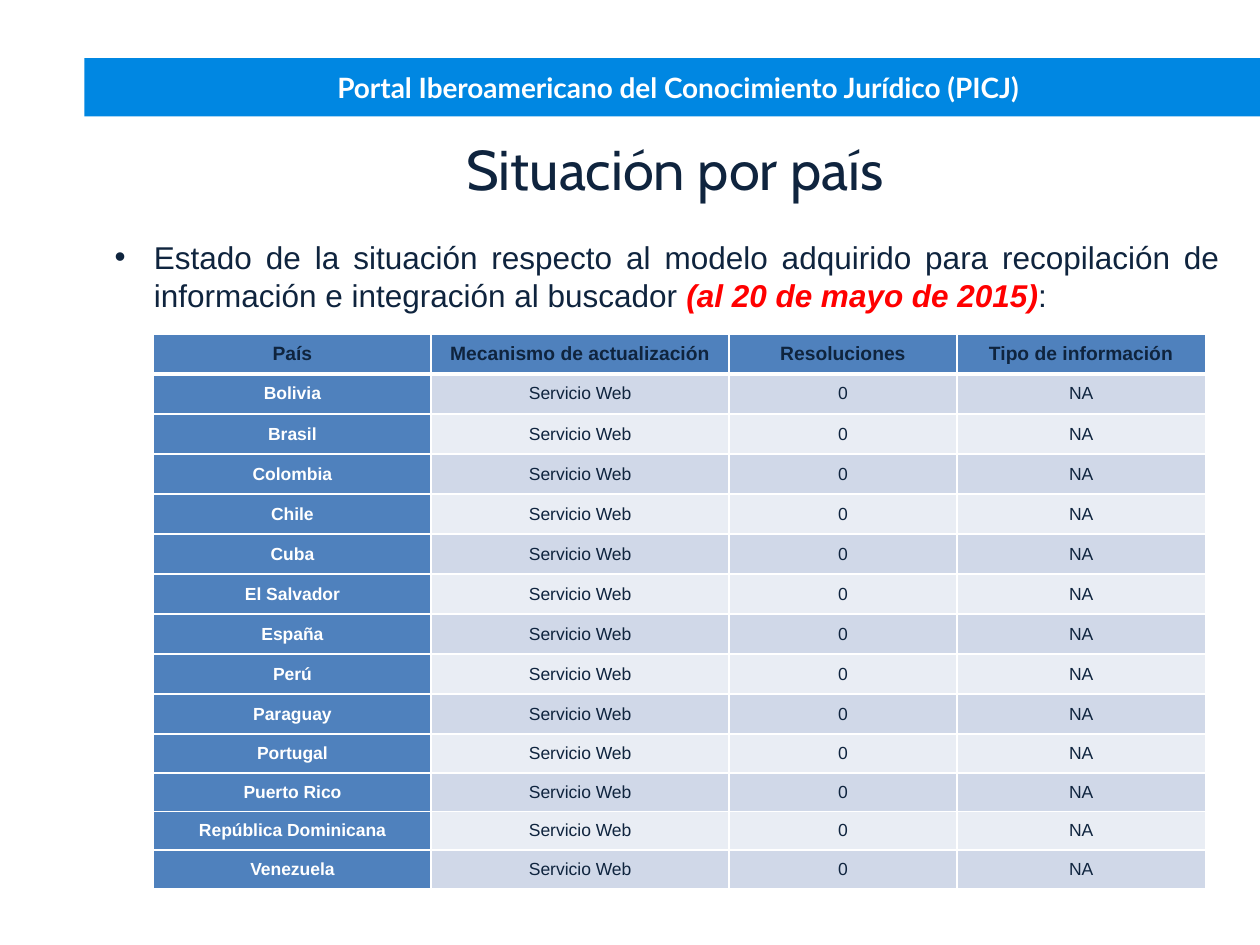
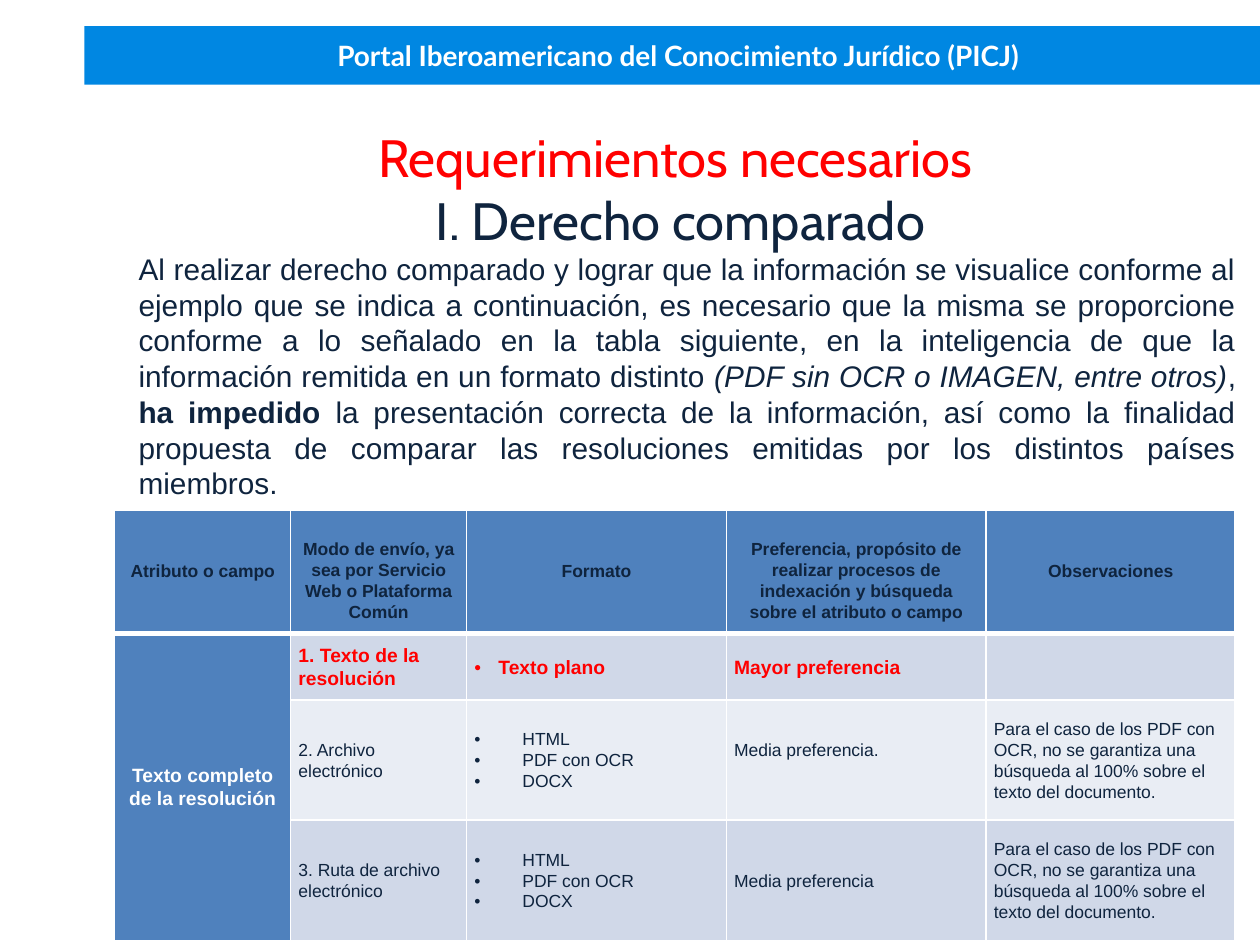
from dataclasses import dataclass

from lxml.etree import SubElement as Sub
from pptx import Presentation
from pptx.dml.color import RGBColor as Rgb
from pptx.enum.shapes import MSO_SHAPE as Shape
from pptx.enum.text import MSO_ANCHOR as Anchor, PP_ALIGN as Align
from pptx.oxml.ns import qn
from pptx.util import Pt


@dataclass(frozen=True)
class Theme:
    ink: str = "0F243E"
    white: str = "FFFFFF"
    red: str = "FF0000"
    band: str = "0087E2"
    head: str = "4F81BD"
    odd: str = "D0D8E8"
    even: str = "E9EDF4"
    sans: str = "Arial"
    show: str = "Cabin"
    bold: str = "Lato"
    small: float = 10
    label: float = 11
    band_size: float = 16
    prose: float = 17
    body: float = 18
    topic: float = 30
    title: float = 32
    thin: float = 0.96
    thick: float = 3


T = Theme()
BAND = "Portal Iberoamericano del Conocimiento Jurídico (PICJ)"
LANDS = ["Bolivia", "Brasil", "Colombia", "Chile", "Cuba", "El Salvador",
         "España", "Perú", "Paraguay", "Portugal", "Puerto Rico",
         "República Dominicana", "Venezuela"]
TYPES = ["HTML", "PDF con OCR", "DOCX"]
NOTE = ("Para el caso de los PDF con OCR, no se garantiza una búsqueda "
        "al 100% sobre el texto del documento.")


def write(frame, text, size=T.small, face=T.sans, color=T.ink, bold=False,
          slant=False, align=Align.LEFT, left=0, hang=0, dot=False,
          before=0, line=None):
    par = frame.paragraphs[0]
    if par.runs:
        par = frame.add_paragraph()
    props = par._p.get_or_add_pPr()
    props.set("marL", str(Pt(left)))
    props.set("indent", str(Pt(-hang)))
    if dot:
        tint = Sub(props, qn("a:buClr"))
        Sub(tint, qn("a:srgbClr"), val=color)
        Sub(props, qn("a:buFont"), typeface=T.sans)
        Sub(props, qn("a:buChar"), char="•")
    par.alignment = align
    if before:
        par.space_before = Pt(before)
    if line:
        par.line_spacing = line
    parts = [(text, {})] if isinstance(text, str) else text
    for words, diff in parts:
        run = par.add_run()
        run.text = words
        font = run.font
        font.size, font.name = Pt(size), face
        font.bold = diff.get("bold", bold)
        font.italic = diff.get("slant", slant)
        font.color.rgb = Rgb.from_string(diff.get("color", color))


def inset(item, left=0, top=0, right=0, bottom=0):
    item.margin_left, item.margin_right = Pt(left), Pt(right)
    item.margin_top, item.margin_bottom = Pt(top), Pt(bottom)


def add_band(slide, top):
    band = slide.shapes.add_shape(Shape.RECTANGLE, Pt(48.2), Pt(top),
                                  Pt(671.8), Pt(33.4))
    band.shadow.inherit = False
    band.fill.solid()
    band.fill.fore_color.rgb = Rgb.from_string(T.band)
    band.line.fill.background()
    frame = band.text_frame
    frame.word_wrap = True
    frame.vertical_anchor = Anchor.MIDDLE
    inset(frame)
    write(frame, BAND, size=T.band_size, face=T.bold, color=T.white,
          bold=True, align=Align.CENTER, left=7.2)


def add_body(slide, top, right=0):
    box = slide.shapes.add_textbox(Pt(65.5), Pt(top), Pt(640.8), Pt(442))
    frame = box.text_frame
    frame.word_wrap = True
    inset(frame, right=right)
    return frame


def add_grid(slide, left, top, cols, rows):
    item = slide.shapes.add_table(len(rows), len(cols), Pt(left), Pt(top),
                                  Pt(sum(cols)), Pt(sum(rows)))
    grid = item.table
    grid.first_row = grid.horz_banding = False
    for col, width in zip(grid.columns, cols):
        col.width = Pt(width)
    for row, height in zip(grid.rows, rows):
        row.height = Pt(height)
    for r in range(len(rows)):
        for c in range(len(cols)):
            paint(grid.cell(r, c), r, c)
    return grid


def paint(cell, r, c):
    props = cell._tc.get_or_add_tcPr()
    wide = {"T": r == 1, "B": r == 0}
    for side in "LRTB":
        size = T.thick if wide.get(side) else T.thin
        edge = Sub(props, qn("a:ln" + side), w=str(Pt(size)))
        fill = Sub(edge, qn("a:solidFill"))
        Sub(fill, qn("a:srgbClr"), val=T.white)
    tone = T.head if r == 0 or c == 0 else T.odd if r % 2 else T.even
    cell.fill.solid()
    cell.fill.fore_color.rgb = Rgb.from_string(tone)


def fill_cell(cell, lines, side, top=3.6, bottom=3.6,
              anchor=Anchor.MIDDLE, **form):
    inset(cell, side, top, side, bottom)
    cell.vertical_anchor = anchor
    for text in [lines] if isinstance(lines, str) else lines:
        write(cell.text_frame, text, **form)


def state_slide(slide):
    add_band(slide, 33.2)
    frame = add_body(slide, 77, right=9.4)
    write(frame, "Situación por país", size=T.title, face=T.show,
          align=Align.CENTER, left=9.4)
    write(frame, [
        ("Estado de la situación respecto al modelo adquirido para "
         "recopilación de información e integración al buscador ", {}),
        ("(al 20 de mayo de 2015)",
         {"color": T.red, "bold": True, "slant": True}),
        (":", {})], size=T.body, align=Align.JUSTIFY, left=22.5, hang=22.5,
        dot=True, before=20.7)

    heads = ["País", "Mecanismo de actualización", "Resoluciones",
             "Tipo de información"]
    data = [heads] + [[land, "Servicio Web", "0", "NA"] for land in LANDS]
    grid = add_grid(slide, 87.8, 190.8, [158.6, 170.2, 130.2, 142],
                    [22.9] * 10 + [22.1] * 4)
    for r, row in enumerate(data):
        for c, text in enumerate(row):
            fill_cell(grid.cell(r, c), text, 0.7, align=Align.CENTER,
                      size=T.small if r else T.label,
                      bold=r == 0 or c == 0,
                      color=T.white if r and c == 0 else T.ink)


def needs_slide(slide):
    add_band(slide, 15)
    frame = add_body(slide, 71.3)
    write(frame, "Requerimientos necesarios", size=T.topic, face=T.show,
          color=T.red, align=Align.CENTER)
    write(frame, "I. Derecho comparado", size=T.topic, face=T.show,
          align=Align.CENTER, left=6)
    write(frame, [
        ("Al realizar derecho comparado y lograr que la información se "
         "visualice conforme al ejemplo que se indica a continuación, es "
         "necesario que la misma se proporcione conforme a lo señalado en "
         "la tabla siguiente, en la inteligencia de que la información "
         "remitida en un formato distinto ", {}),
        ("(PDF sin OCR o IMAGEN, entre otros)", {"slant": True}),
        (", ", {}),
        ("ha impedido ", {"bold": True}),
        ("la presentación correcta de la información, así como la "
         "finalidad propuesta de comparar las resoluciones emitidas por "
         "los distintos países miembros.", {})],
        size=T.prose, align=Align.JUSTIFY, left=13.7)

    grid = add_grid(slide, 65.5, 291.8, [100.6, 100.6, 148.4, 148.4, 142.4],
                    [69, 38, 68.7, 68.7])
    side, step, line = 4.5, 12.3, 1.07
    heads = [
        ("Atributo o campo", 2),
        ("Modo de envío, ya sea por Servicio Web o Plataforma Común", 1),
        ("Formato", 2),
        ("Preferencia, propósito de realizar procesos de indexación y "
         "búsqueda sobre el atributo o campo", 1),
        ("Observaciones", 2)]
    for c, (text, skip) in enumerate(heads):
        fill_cell(grid.cell(0, c), text, side, top=3.6 + skip * step,
                  bottom=3, anchor=Anchor.TOP, bold=True,
                  align=Align.CENTER, line=line)

    first = grid.cell(1, 0)
    first.merge(grid.cell(3, 0))
    fill_cell(first, "Texto completo de la resolución", side, size=T.label,
              color=T.white, bold=True, align=Align.CENTER, line=line)

    plain = {"line": line}
    loud = {"line": line, "size": T.label, "color": T.red, "bold": True}
    rows = [
        (["1. Texto de la resolución", "Texto plano", "Mayor preferencia"],
         loud, 13.7, 0),
        (["2. Archivo electrónico", TYPES, "Media preferencia.", NOTE],
         plain, 27.4, step),
        (["3. Ruta de archivo electrónico", TYPES, "Media preferencia",
          NOTE], plain, 27.4, 0)]
    for r, (row, form, hang, lift) in enumerate(rows, 1):
        for c, text in enumerate(row, 1):
            more = {"dot": True, "left": hang, "hang": hang} if c == 2 else {}
            rise = lift if c == 3 else 0
            fill_cell(grid.cell(r, c), text, side, bottom=3.6 + rise,
                      **form, **more)


def main():
    deck = Presentation()
    deck.slide_width, deck.slide_height = Pt(720), Pt(540)
    for build in (state_slide, needs_slide):
        build(deck.slides.add_slide(deck.slide_layouts[6]))
    deck.save("out.pptx")


if __name__ == "__main__":
    main()
